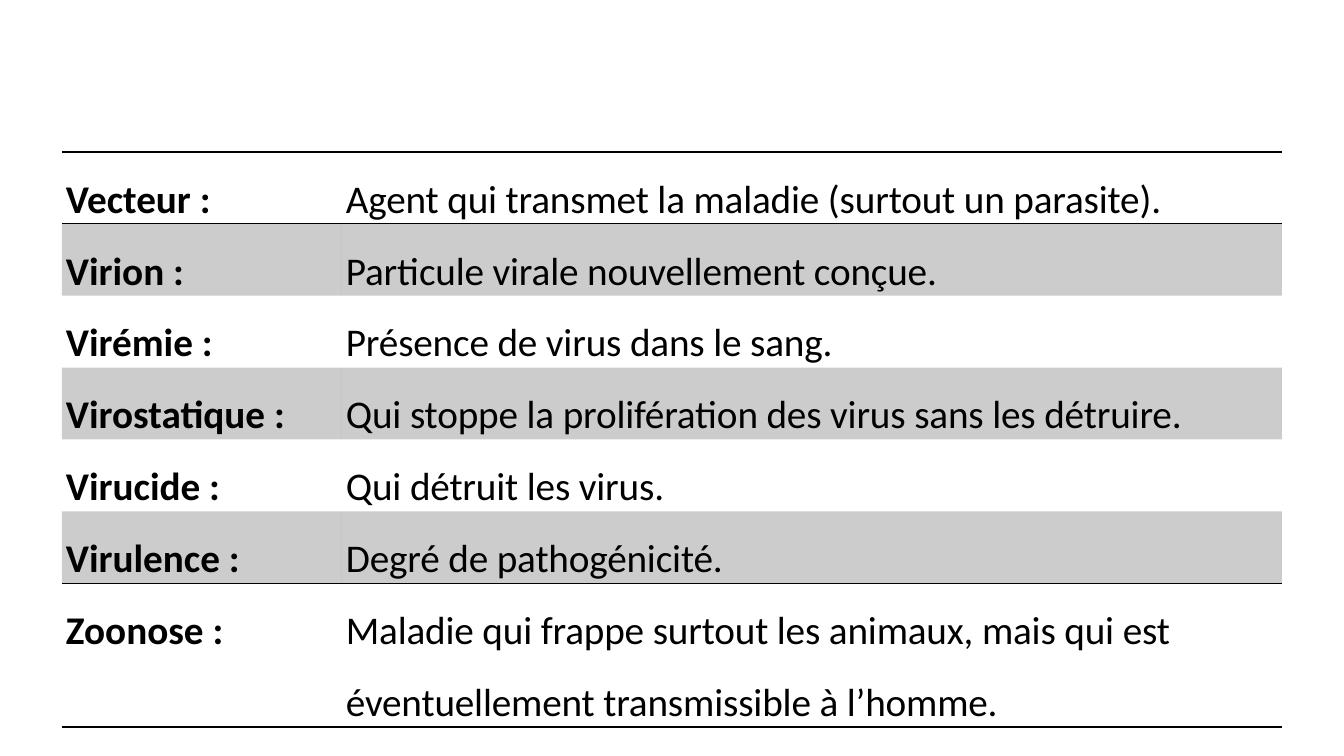
"""Build a glossary slide: a banded table of virology terms."""
from dataclasses import dataclass
from lxml.etree import SubElement as Sub
from pptx import Presentation
from pptx.dml.color import RGBColor as RGB
from pptx.oxml import parse_xml
from pptx.oxml.ns import nsdecls, qn
from pptx.util import Pt

TERMS = [
    ("Vecteur :", "Agent qui transmet la maladie (surtout un parasite)."),
    ("Virion :", "Particule virale nouvellement conçue."),
    ("Virémie :", "Présence de virus dans le sang."),
    ("Virostatique :", "Qui stoppe la prolifération des virus sans les détruire."),
    ("Virucide :", "Qui détruit les virus."),
    ("Virulence :", "Degré de pathogénicité."),
    ("Zoonose :", "Maladie qui frappe surtout les animaux, mais qui est "
                  "éventuellement transmissible à l’homme."),
]
PX = 914400 / 100.8
LEFT, TOP = 62, 152
COLS = (280, 940)
ROW = 71
PAD = 4
PLAIN = "{2D5ABB26-0587-4C30-8999-92F81FD0307C}"


@dataclass(frozen=True)
class Theme:
    font: str = "Calibri"
    size: int = 28
    ink: str = "000000"
    band: int = 20
    rule: int = 1


LOOK = Theme()


def px(n):
    return round(n * PX)


def write(cell, text, bold=False, before=1.6, track=0):
    cell.margin_left = px(PAD)
    cell.margin_right = cell.margin_top = cell.margin_bottom = 0
    para = cell.text_frame.paragraphs[0]
    para.line_spacing = 1.5
    para.space_before = Pt(before)
    run = para.add_run()
    run.text = text
    font = run.font
    font.name, font.size, font.bold = LOOK.font, Pt(LOOK.size), bold
    font.color.rgb = RGB.from_string(LOOK.ink)
    run._r.get_or_add_rPr().set("spc", str(track))


def shade(cell):
    cell.fill.solid()
    cell.fill.fore_color.rgb = RGB.from_string(LOOK.ink)
    tint = cell._tc.tcPr.find(".//" + qn("a:srgbClr"))
    Sub(tint, qn("a:alpha"), val=str(LOOK.band * 1000))


def rule(cell):
    for i, side in enumerate(("lnT", "lnB")):
        cell._tc.get_or_add_tcPr().insert(i, parse_xml(
            f'<a:{side} {nsdecls("a")} w="{Pt(LOOK.rule)}"><a:solidFill>'
            f'<a:srgbClr val="{LOOK.ink}"/></a:solidFill></a:{side}>'))


def main():
    deck = Presentation()
    deck.slide_width, deck.slide_height = px(1344), px(756)
    slide = deck.slides.add_slide(deck.slide_layouts[6])
    last = len(TERMS) - 1
    frame = slide.shapes.add_table(len(TERMS), len(COLS), px(LEFT), px(TOP),
                                   px(sum(COLS)), px(ROW * (last + 2)))
    table = frame.table
    table.first_row = table.horz_banding = False
    table._tbl.tblPr.find(qn("a:tableStyleId")).text = PLAIN
    for col, wide in zip(table.columns, COLS):
        col.width = px(wide)
    for i, (term, sense) in enumerate(TERMS):
        table.rows[i].height = px(ROW * (2 if i == last else 1))
        head, body = table.cell(i, 0), table.cell(i, 1)
        write(head, term, bold=True, before=1.8)
        write(body, sense, track=-10)
        for cell in (head, body):
            if i % 2:
                shade(cell)
            else:
                cell.fill.background()
            if i in (0, last):
                rule(cell)
    deck.save("out.pptx")


if __name__ == "__main__":
    main()
